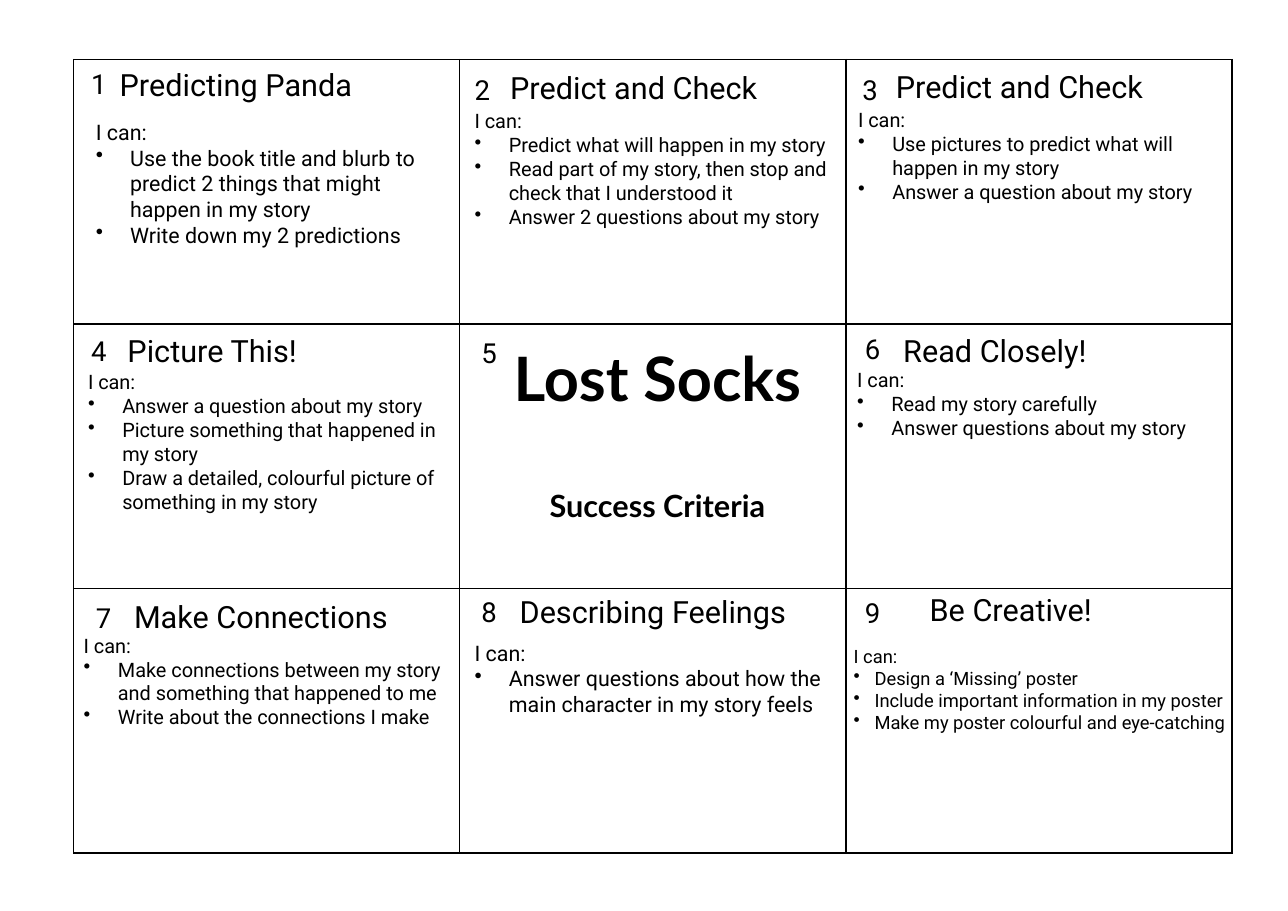
"""Build the Lost Socks success criteria grid on one landscape slide."""
from dataclasses import dataclass

from lxml import etree
from pptx import Presentation
from pptx.dml.color import RGBColor
from pptx.enum.text import PP_ALIGN
from pptx.oxml.ns import qn
from pptx.util import Cm, Pt

CENTER = PP_ALIGN.CENTER
LEFT = PP_ALIGN.LEFT


@dataclass(frozen=True)
class Theme:
    ink: str = "000000"
    body_font: str = "Roboto"
    title_font: str = "Lato"
    title_size: int = 40
    heading_size: int = 20
    number_size: int = 18
    border_width: int = 1


THEME = Theme()
PAGE = (29.69, 21.01)
GRID = {"left": 1.7, "top": 1.37, "column": 8.9, "row": 6.1, "count": 3}
NUMBER_BOX = (0.69, 1.02)
HEADING_HEIGHT = 1.12
WIDE_INDENT, NARROW_INDENT = 0.79, 0.48
INTRO = "I can:"

CENTRE_BOX = (10.8, 7.72, 8.71, 4.52)
CENTRE_LINES = [
    ("Lost Socks", THEME.title_size, 0),
    ("Success Criteria", THEME.heading_size, 48),
]

NUMBERS = [
    (1.85, 1.42), (10.69, 1.55), (19.63, 1.55),
    (1.85, 7.57), (10.85, 7.62), (19.69, 7.54),
    (1.96, 13.74), (10.85, 13.59), (19.69, 13.61),
]

HEADINGS = [
    ("Predicting Panda", 2.51, 1.4, 7.67),
    ("Predict and Check", 11.51, 1.47, 7.09),
    ("Predict and Check", 20.4, 1.45, 7.09),
    ("Picture This!", 2.69, 7.54, 5.21),
    ("Read Closely!", 20.57, 7.52, 7.8),
    ("Make Connections", 2.84, 13.67, 6.88),
    ("Describing Feelings", 11.73, 13.56, 7.52),
    ("Be Creative!", 21.18, 13.51, 6.4),
]

CRITERIA = [
    ((1.96, 2.62, 8.23, 3.84), 14, WIDE_INDENT, [
        "Use the book title and blurb to predict 2 things that might happen in my story",
        "Write down my 2 predictions",
    ]),
    ((10.69, 2.39, 9.02, 4.14), 13, WIDE_INDENT, [
        "Predict what will happen in my story",
        "Read part of my story, then stop and check that I understood it",
        "Answer 2 questions about my story",
    ]),
    ((19.53, 2.36, 9.02, 3.02), 13, WIDE_INDENT, [
        "Use pictures to predict what will happen in my story",
        "Answer a question about my story",
    ]),
    ((1.78, 8.41, 8.99, 4.19), 13, WIDE_INDENT, [
        "Answer a question about my story",
        "Picture something that happened in my story",
        "Draw a detailed, colourful picture of something in my story",
    ]),
    ((19.51, 8.36, 8.86, 1.93), 13, WIDE_INDENT, [
        "Read my story carefully",
        "Answer questions about my story",
    ]),
    ((1.68, 14.48, 9.09, 3.58), 13, WIDE_INDENT, [
        "Make connections between my story and something that happened to me",
        "Write about the connections I make",
    ]),
    ((10.69, 14.63, 8.79, 2.64), 14, WIDE_INDENT, [
        "Answer questions about how the main character in my story feels",
    ]),
    ((19.43, 14.76, 9.09, 3.33), 12, NARROW_INDENT, [
        "Design a ‘Missing’ poster",
        "Include important information in my poster",
        "Make my poster colourful and eye-catching",
    ]),
]


def add_box(page, left, top, width, height):
    box = page.shapes.add_textbox(Cm(left), Cm(top), Cm(width), Cm(height))
    box.text_frame.word_wrap = True
    return box.text_frame


def write(para, text, size, font=THEME.body_font, bold=False, align=LEFT):
    para.alignment = align
    span = para.add_run()
    span.text = text
    span.font.size = Pt(size)
    span.font.name = font
    span.font.bold = bold
    span.font.color.rgb = RGBColor.from_string(THEME.ink)


def add_bullet(para, indent):
    properties = para._p.get_or_add_pPr()
    properties.set("marL", str(Cm(indent)))
    properties.set("indent", str(-Cm(indent)))
    etree.SubElement(properties, qn("a:buChar"), char="•")


def style_cell(cell):
    properties = cell._tc.get_or_add_tcPr()
    for side in ("a:lnL", "a:lnR", "a:lnT", "a:lnB"):
        line = etree.SubElement(properties, qn(side), w=str(Pt(THEME.border_width)))
        fill = etree.SubElement(line, qn("a:solidFill"))
        etree.SubElement(fill, qn("a:srgbClr"), val=THEME.ink)
    cell.fill.background()


def add_grid(page):
    count = GRID["count"]
    table = page.shapes.add_table(
        count, count, Cm(GRID["left"]), Cm(GRID["top"]),
        Cm(GRID["column"] * count), Cm(GRID["row"] * count)).table
    table.first_row = False
    table.horz_banding = False
    for column in table.columns:
        column.width = Cm(GRID["column"])
    for row in table.rows:
        row.height = Cm(GRID["row"])
    for cell in table.iter_cells():
        style_cell(cell)


def add_centre(page):
    frame = add_box(page, *CENTRE_BOX)
    for index, (text, size, gap) in enumerate(CENTRE_LINES):
        para = frame.add_paragraph() if index else frame.paragraphs[0]
        para.space_before = Pt(gap)
        write(para, text, size, THEME.title_font, True, CENTER)


def add_criteria(page, place, size, indent, points):
    frame = add_box(page, *place)
    write(frame.paragraphs[0], INTRO, size)
    for point in points:
        para = frame.add_paragraph()
        add_bullet(para, indent)
        write(para, point, size)


def main():
    deck = Presentation()
    deck.slide_width, deck.slide_height = (Cm(side) for side in PAGE)
    page = deck.slides.add_slide(deck.slide_layouts[6])
    add_grid(page)
    add_centre(page)
    for number, (left, top) in enumerate(NUMBERS, start=1):
        frame = add_box(page, left, top, *NUMBER_BOX)
        write(frame.paragraphs[0], str(number), THEME.number_size)
    for text, left, top, width in HEADINGS:
        frame = add_box(page, left, top, width, HEADING_HEIGHT)
        write(frame.paragraphs[0], text, THEME.heading_size)
    for criteria in CRITERIA:
        add_criteria(page, *criteria)
    deck.save("out.pptx")


if __name__ == "__main__":
    main()
